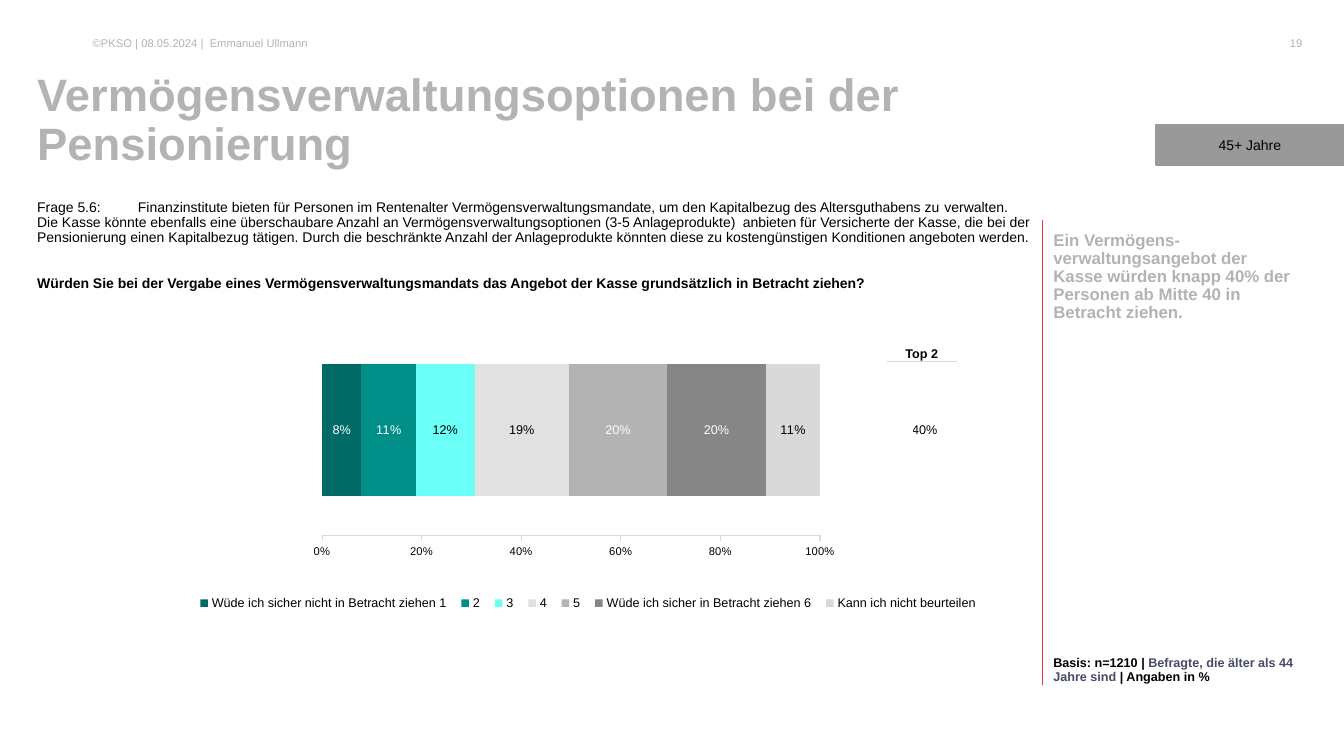
"""Build the slide on asset management options at retirement."""
from dataclasses import dataclass

from lxml import etree
from pptx import Presentation
from pptx import util as u
from pptx.chart import data
from pptx.dml import color
from pptx.enum import chart as ch
from pptx.enum import shapes, text
from pptx.oxml import ns, parse_xml

Pt = u.Pt


@dataclass(frozen=True)
class Theme:
    font: str = "Arial"
    black: str = "000000"
    white: str = "FFFFFF"
    soft: str = "B3B3B3"
    rule: str = "D9D9D9"
    red: str = "E73246"
    slate: str = "474B69"
    tag: str = "999999"
    head: float = 32.4
    lead: float = 12
    body: float = 10
    note: float = 9
    tiny: float = 8


T = Theme()
RGB = color.RGBColor.from_string
MID, LEFT = text.MSO_ANCHOR.MIDDLE, text.PP_ALIGN.LEFT


def style(font, size, ink=T.black, bold=False):
    font.name, font.size, font.bold = T.font, Pt(size), bold
    font.color.rgb = RGB(ink)


def put(para, words, size=T.body, ink=T.black, bold=False, align=LEFT, line=1.0):
    run = para.add_run()
    run.text = words
    style(run.font, size, ink, bold)
    para.alignment, para.line_spacing = align, line
    para.space_before = Pt(0)
    return para


deck = Presentation()
deck.slide_width, deck.slide_height = Pt(960), Pt(540)
slide = deck.slides.add_slide(deck.slide_layouts[5])
items = slide.shapes

line = items.add_connector(shapes.MSO_CONNECTOR.STRAIGHT,
                           Pt(744.5), Pt(157), Pt(744.5), Pt(489))
line.line.color.rgb, line.line.width = RGB(T.red), Pt(1)
etree.SubElement(line._element.spPr, ns.qn("a:effectLst"))

title = items.title
title.left, title.top, title.width, title.height = Pt(26.6), Pt(52.6), Pt(756), Pt(67.7)
places = {
    "ask": (26.6, 143.3, 710.7, 60.5, text.MSO_ANCHOR.TOP),
    "foot": (66.2, 19.4, 830, 22.3, MID),
    "page": (908, 19.4, 22.3, 22.3, MID),
    "key": (752.4, 165.6, 173.5, 240, text.MSO_ANCHOR.TOP),
    "base": (752.4, 406, 173.5, 82.8, text.MSO_ANCHOR.BOTTOM),
}
frames = {"title": title.text_frame}
for name, (x, y, w, h, anchor) in places.items():
    frames[name] = items.add_textbox(Pt(x), Pt(y), Pt(w), Pt(h)).text_frame
    frames[name].vertical_anchor = anchor
frames["title"].vertical_anchor = MID
for frame in frames.values():
    frame.word_wrap, frame.auto_size = True, text.MSO_AUTO_SIZE.NONE
    frame.margin_left = frame.margin_right = frame.margin_top = frame.margin_bottom = 0
first = {name: frame.paragraphs[0] for name, frame in frames.items()}

put(first["title"], "Vermögensverwaltungsoptionen bei der Pensionierung",
    size=T.head, ink=T.soft, bold=True, line=0.9)
put(first["ask"],
    "Frage 5.6:\tFinanzinstitute bieten für Personen im Rentenalter "
    "Vermögensverwaltungsmandate, um den Kapitalbezug des Altersguthabens zu \tverwalten. "
    "Die Kasse könnte ebenfalls eine überschaubare Anzahl an Vermögensverwaltungsoptionen "
    "(3-5 Anlageprodukte) \tanbieten für Versicherte der Kasse, die bei der Pensionierung "
    "einen Kapitalbezug tätigen. Durch die beschränkte Anzahl der Anlageprodukte könnten "
    "diese zu kostengünstigen Konditionen angeboten werden.", line=0.9)
query = put(frames["ask"].add_paragraph(),
            "Würden Sie bei der Vergabe eines Vermögensverwaltungsmandats das Angebot der "
            "Kasse grundsätzlich in Betracht ziehen?", bold=True, line=0.9)
query.space_before = Pt(21.4)
put(first["foot"], "©PKSO | 08.05.2024 |  Emmanuel Ullmann", size=T.tiny, ink=T.soft)
put(first["page"], "19", size=T.tiny, ink=T.soft, align=text.PP_ALIGN.RIGHT)
put(first["key"], "Ein Vermögens-verwaltungsangebot der Kasse würden knapp 40% der "
    "Personen ab Mitte 40 in Betracht ziehen.",
    size=T.lead, ink=T.soft, bold=True, line=0.9)
for words, ink in (("Basis: n=1210 | ", T.black),
                   ("Befragte, die älter als 44 Jahre sind ", T.slate),
                   ("| Angaben in %", T.black)):
    put(first["base"], words, size=T.note, ink=ink, bold=True, line=0.9)

parts = [
    ("Wüde ich sicher nicht in Betracht ziehen 1", 0.08, "006B66", T.white),
    ("2", 0.11, "008F88", T.white),
    ("3", 0.12, "6CFFF8", T.black),
    ("4", 0.19, "E1E1E1", T.black),
    ("5", 0.20, T.soft, T.white),
    ("Wüde ich sicher in Betracht ziehen 6", 0.20, "868686", T.white),
    ("Kann ich nicht beurteilen", 0.11, T.rule, T.black),
]
facts = data.CategoryChartData(number_format="0%")
facts.categories = ["1"]
for name, share, *_ in parts:
    facts.add_series(name, [share])
chart = items.add_chart(ch.XL_CHART_TYPE.BAR_STACKED_100, Pt(25.2), Pt(213.1),
                        Pt(711.4), Pt(226.8), facts).chart
style(chart.font, T.body)
chart.has_title = False
plot = chart.plots[0]
plot.gap_width, plot.overlap, plot.vary_by_categories = 60, 100, False
for bar, (_, _, fill, ink) in zip(plot.series, parts):
    bar.format.fill.solid()
    bar.format.fill.fore_color.rgb = RGB(fill)
    label = bar.data_labels
    label.show_value, label.position = True, ch.XL_LABEL_POSITION.CENTER
    label.number_format, label.number_format_is_linked = "0%", False
    style(label.font, T.note, ink)

chart.category_axis.visible = False
axis = chart.value_axis
axis.has_major_gridlines = False
axis.minimum_scale, axis.maximum_scale, axis.major_unit = 0, 1, 0.2
axis.major_tick_mark = ch.XL_TICK_MARK.OUTSIDE
axis.format.line.color.rgb, axis.format.line.width = RGB(T.rule), Pt(0.75)
axis.tick_labels.number_format = "0%"
axis.tick_labels.number_format_is_linked = False
style(axis.tick_labels.font, T.tiny)

chart.has_legend = True
legend = chart.legend
legend.position, legend.include_in_layout = ch.XL_LEGEND_POSITION.BOTTOM, False
style(legend.font, T.note)
area = chart._chartSpace.chart.plotArea
for old in area.findall(ns.qn("c:layout")):
    area.remove(old)
for owner, spot, inner, dims in ((area, 0, True, (0.288, 0.082, 0.5, 0.665)),
                                 (legend._element, 1, False, (0.155, 0.92, 0.8, 0.08))):
    target = '<c:layoutTarget val="inner"/>' if inner else ""
    modes = '<c:xMode val="edge"/><c:yMode val="edge"/>'
    sizes = "".join(f'<c:{tag} val="{dim}"/>' for tag, dim in zip("xywh", dims))
    owner.insert(spot, parse_xml(
        f'<c:layout {ns.nsdecls("c")}><c:manualLayout>{target}{modes}{sizes}'
        "</c:manualLayout></c:layout>"))

cells = []
for words, x, y, h, bold, align in (
        ("40%", 651.6, 258.5, 97.2, False, LEFT),
        ("Top 2", 632.9, 247.3, 10.8, True, text.PP_ALIGN.CENTER)):
    table = items.add_table(1, 1, Pt(x), Pt(y), Pt(51.1), Pt(h)).table
    table.first_row = table.horz_banding = False
    cell = table.cell(0, 0)
    cell.margin_left = cell.margin_right = cell.margin_top = cell.margin_bottom = 0
    cell.vertical_anchor = MID
    cell.fill.background()
    put(cell.text_frame.paragraphs[0], words, size=T.note, bold=bold, align=align)
    cells.append(cell)
cells[-1]._tc.get_or_add_tcPr().insert(0, parse_xml(
    f'<a:lnB {ns.nsdecls("a")} w="{Pt(1)}"><a:solidFill><a:srgbClr val="{T.rule}"/>'
    "</a:solidFill></a:lnB>"))

tag = items.add_shape(shapes.MSO_SHAPE.RECTANGLE, Pt(825.8), Pt(89.3), Pt(134), Pt(28.8))
tag.shadow.inherit = False
tag.fill.solid()
tag.fill.fore_color.rgb = tag.line.color.rgb = RGB(T.tag)
tag.line.width = Pt(1.5)
tag.text_frame.vertical_anchor = MID
put(tag.text_frame.paragraphs[0], "45+ Jahre", align=text.PP_ALIGN.CENTER)

deck.save("out.pptx")
